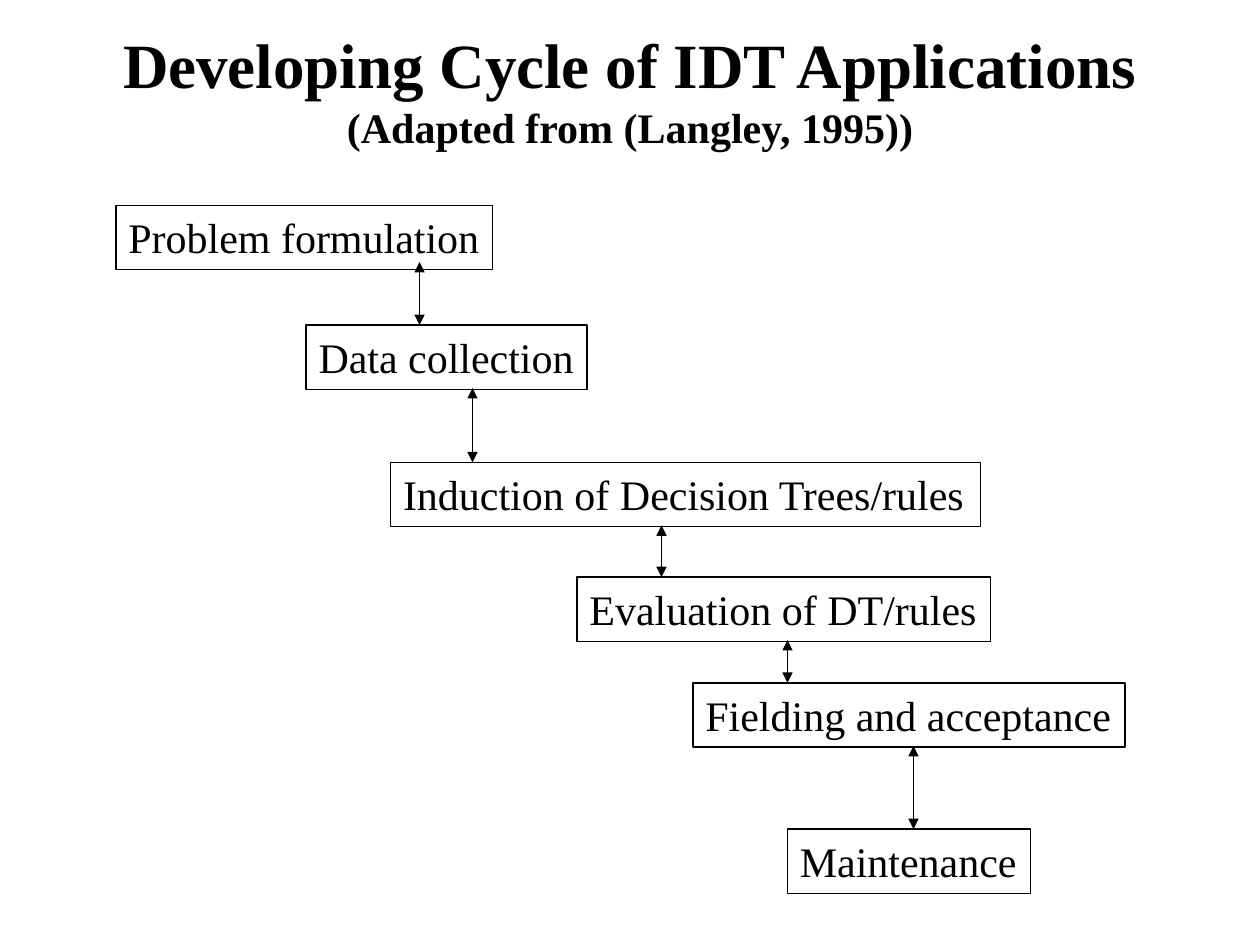
from lxml import etree
from pptx import Presentation
from pptx.dml.color import RGBColor
from pptx.enum.shapes import MSO_CONNECTOR, MSO_SHAPE
from pptx.enum.text import MSO_ANCHOR, MSO_AUTO_SIZE, PP_ALIGN
from pptx.oxml.ns import qn
from pptx.util import Inches, Pt

RECTANGLE = MSO_SHAPE.RECTANGLE
STRAIGHT = MSO_CONNECTOR.STRAIGHT
MIDDLE = MSO_ANCHOR.MIDDLE
TOP = MSO_ANCHOR.TOP
NO_FIT = MSO_AUTO_SIZE.NONE
GROW = MSO_AUTO_SIZE.SHAPE_TO_FIT_TEXT
LEFT = PP_ALIGN.LEFT
CENTER = PP_ALIGN.CENTER

FONT = "Times New Roman"
COLORS = {"ink": "000000", "paper": "FFFFFF"}
TITLE_ONLY = 5
STEP_HEIGHT = 0.51
LINE_WIDTH = Pt(0.75)

TITLE_BOX = (0.75, 0.08, 8.5, 1.25)
CYCLE_BOX = (0.92, 1.63)

# Label, left, top and width of each step, then x and start y of the arrow
# that leads to it; all relative to the corner of the cycle box
STEPS = [
    ("Problem formulation", 0, 0, 2.99, None, None),
    ("Data collection", 1.51, 0.95, 2.23, 2.41, 0.45),
    ("Induction of Decision Trees/rules", 2.18, 2.04, 4.68, 2.83, 1.45),
    ("Evaluation of DT/rules", 3.66, 2.95, 3.28, 4.33, 2.54),
    ("Fielding and acceptance", 4.58, 3.79, 3.43, 5.33, 3.45),
    ("Maintenance", 5.33, 4.95, 1.93, 6.33, 4.29),
]


def color(name):
    return RGBColor.from_string(COLORS[name])


def add_span(para, text, size, bold=False):
    span = para.add_run()
    span.text = text
    span.font.name = FONT
    span.font.size = Pt(size)
    span.font.bold = bold
    span.font.color.rgb = color("ink")


def add_title(page, box):
    title = page.shapes.title
    title.left, title.top, title.width, title.height = map(Inches, box)
    frame = title.text_frame
    frame.auto_size = NO_FIT
    frame.word_wrap = True
    frame.vertical_anchor = MIDDLE
    para = frame.paragraphs[0]
    para.alignment = CENTER
    add_span(para, "Developing Cycle of IDT Applications", 36, bold=True)
    para.add_line_break()
    add_span(para, "(Adapted from (Langley, 1995))", 24, bold=True)


def add_step(page, label, left, top, width):
    step = page.shapes.add_shape(
        RECTANGLE, Inches(left), Inches(top), Inches(width), Inches(STEP_HEIGHT))
    step.shadow.inherit = False
    step.fill.background()
    step.line.color.rgb = color("ink")
    step.line.width = LINE_WIDTH
    frame = step.text_frame
    frame.word_wrap = False
    frame.auto_size = GROW
    frame.vertical_anchor = TOP
    para = frame.paragraphs[0]
    para.alignment = LEFT
    add_span(para, label, 24)


def add_double_arrow(page, x, start, end):
    arrow = page.shapes.add_connector(
        STRAIGHT, Inches(x), Inches(start), Inches(x), Inches(end))
    arrow.line.color.rgb = color("ink")
    arrow.line.width = LINE_WIDTH
    outline = arrow.line._get_or_add_ln()
    for tag in ("a:headEnd", "a:tailEnd"):
        etree.SubElement(outline, qn(tag), type="triangle")
    etree.SubElement(arrow._element.spPr, qn("a:effectLst"))


def add_cycle(page, box):
    left, top = box
    for label, step_x, step_y, width, arrow_x, arrow_y in STEPS:
        add_step(page, label, left + step_x, top + step_y, width)
        if arrow_x is not None:
            add_double_arrow(page, left + arrow_x, top + arrow_y, top + step_y)


def main():
    deck = Presentation()
    deck.slide_width, deck.slide_height = Inches(10), Inches(7.5)
    page = deck.slides.add_slide(deck.slide_layouts[TITLE_ONLY])
    page.background.fill.solid()
    page.background.fill.fore_color.rgb = color("paper")
    add_title(page, TITLE_BOX)
    add_cycle(page, CYCLE_BOX)
    deck.save("out.pptx")


if __name__ == "__main__":
    main()
